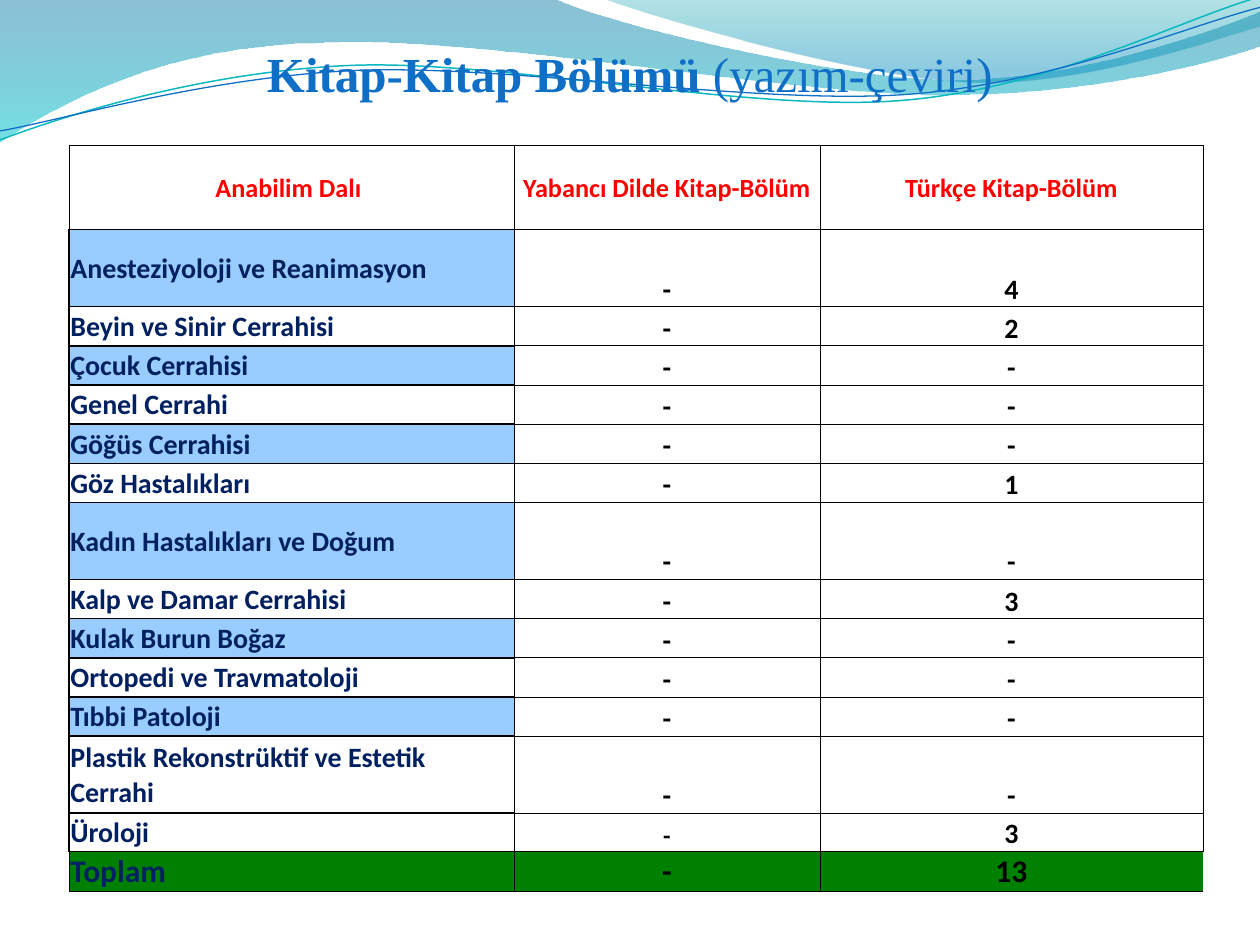
from itertools import chain
from math import cos, radians, sin

from lxml.etree import SubElement
from pptx import Presentation
from pptx.dml.color import RGBColor
from pptx.enum.text import MSO_ANCHOR, MSO_AUTO_SIZE, PP_ALIGN
from pptx.oxml.ns import qn
from pptx.util import Cm, Pt

TITLE_ONLY = 5
LINE_TILT = -2.7
BLACK, RED, NAVY = "000000", "FF0000", "002060"
LIGHT_BLUE, WHITE, GREEN = "99CCFF", "FFFFFF", "008000"

HEADERS = ["Anabilim Dalı ", "Yabancı Dilde Kitap-Bölüm", "Türkçe Kitap-Bölüm"]
DEPARTMENTS = [
    ("Anesteziyoloji ve Reanimasyon", "-", "4"),
    ("Beyin ve Sinir Cerrahisi", "-", "2"),
    ("Çocuk Cerrahisi", "-", "-"),
    ("Genel Cerrahi", "-", "-"),
    ("Göğüs Cerrahisi", "-", "-"),
    ("Göz Hastalıkları", "-", "1"),
    ("Kadın Hastalıkları ve Doğum", "-", "-"),
    ("Kalp ve Damar Cerrahisi", "-", "3"),
    ("Kulak Burun Boğaz", "-", "-"),
    ("Ortopedi ve Travmatoloji", "-", "-"),
    ("Tıbbi Patoloji", "-", "-"),
    ("Plastik Rekonstrüktif ve Estetik Cerrahi", "-", "-"),
    ("Üroloji", "-", "3"),
]
TOTAL = ("Toplam", "-", "13")
COLUMN_WIDTHS = [8.97, 6.17, 7.72]
TALL_ROWS = {0: 1.7, 1: 1.55, 7: 1.55, 12: 1.55, 13: 0.77, 14: 0.77}
ROW_HEIGHT = 0.79

# Outlines in cm: a start point, then segments of one point (line) or three (curve).
LEFT_WAVE = [
    (0, -0.03), [(11.18, -0.03)],
    [(12.09, 0.43), (16.87, 1.6), (19.25, 1.6)],
    [(21.67, 1.6), (24.33, 0.66), (25.4, 0.23)], [(25.43, 0.91)],
    [(24.97, 1.12), (22.1, 1.93), (18.95, 1.91)],
    [(15.8, 1.91), (9.7, 0.71), (6.53, 0.86)],
    [(3.28, 0.89), (1.17, 2.11), (-0.03, 2.87)], [(0, -0.03)],
]
RIGHT_WAVE = [
    (12.17, -0.03),
    [(12.93, 0.28), (17.32, 1.57), (19.53, 1.65)],
    [(21.74, 1.75), (24.41, 0.81), (25.4, 0.53)], [(25.4, 0)], [(12.17, -0.03)],
]
TEAL_LINE = [
    (0, 2.82),
    [(1.22, 2.36), (4.01, 1.45), (7.04, 1.32)],
    [(10.03, 1.19), (15.06, 2.26), (18.11, 2.03)],
    [(21.16, 1.8), (23.83, 0.38), (25.35, -0.05)],
]
BLUE_LINE = [
    (0, 2.64),
    [(1.19, 2.44), (4.17, 1.55), (7.19, 1.42)],
    [(10.24, 1.3), (15.16, 2.11), (18.21, 1.91)],
    [(21.23, 1.7), (23.9, 0.53), (25.4, 0.15)],
]


def rgb(value):
    return RGBColor.from_string(value)


def add_text(paragraph, text, *, size, color, font="Calibri", bold=True, align=PP_ALIGN.LEFT):
    paragraph.alignment = align
    run = paragraph.add_run()
    run.text = text
    run.font.name, run.font.size, run.font.bold = font, Pt(size), bold
    run.font.color.rgb = rgb(color)


def level(points, center):
    """Turn points about the center so that LINE_TILT brings them back."""
    angle = radians(-LINE_TILT)
    cx, cy = center
    return [(cx + (x - cx) * cos(angle) - (y - cy) * sin(angle),
             cy + (x - cx) * sin(angle) + (y - cy) * cos(angle)) for x, y in points]


def bend(shape, segments):
    """Join the straight steps of each three-point segment into one Bézier curve."""
    steps = iter(list(shape.element.iter(qn("a:lnTo"))))
    for segment in segments:
        first, *others = [next(steps) for _ in segment]
        if others:
            first.tag = qn("a:cubicBezTo")
        for step in others:
            first.append(step[0])
            step.getparent().remove(step)


def set_borders(cell, **widths):
    """Draw black borders given as L, R, T, B in points; None hides one."""
    properties = cell._tc.get_or_add_tcPr()
    for side in "LRTB":
        width = widths[side]
        border = SubElement(properties, qn(f"a:ln{side}"), w=str(Pt(width or 0)))
        if width is None:
            SubElement(border, qn("a:noFill"))
        else:
            fill = SubElement(border, qn("a:solidFill"))
            SubElement(fill, qn("a:srgbClr"), val=BLACK)


class SlideBuilder:
    """Holds the current slide and the style of its elements."""

    heading_font = "Times New Roman"
    heading_color = "0F6FC6"

    def __init__(self, slide):
        self.slide = slide

    def outline(self, points, segments, close):
        start, *rest = [(Cm(x), Cm(y)) for x, y in points]
        builder = self.slide.shapes.build_freeform(*start)
        builder.add_line_segments(rest, close=close)
        shape = builder.convert_to_shape()
        bend(shape, segments)
        shape.shadow.inherit = False
        return shape

    def wave(self, outline, stops):
        """Add a filled wave; stops are (position, color, opacity percent)."""
        start, *segments = outline
        shape = self.outline([start, *chain(*segments)], segments, close=True)
        shape.line.fill.background()
        shape.fill.gradient()
        shape.fill.gradient_angle = 270
        for stop, (position, color, _) in zip(shape.fill.gradient_stops, stops):
            stop.position = position
            stop.color.rgb = rgb(color)
        for tint, (_, _, opacity) in zip(shape.element.spPr.iter(qn("a:srgbClr")), stops):
            SubElement(tint, qn("a:alpha"), val=str(opacity * 1000))

    def curve(self, outline, center, color, width):
        start, *segments = outline
        points = level([start, *chain(*segments)], center)
        shape = self.outline(points, segments, close=False)
        shape.rotation = LINE_TILT
        shape.fill.background()
        shape.line.color.rgb = rgb(color)
        shape.line.width = Pt(width)

    def title(self, parts):
        title = self.slide.shapes.title
        title.element.getparent().append(title.element)  # in front of the waves
        title.left, title.top, title.width, title.height = Cm(1.39), Cm(0.71), Cm(22.86), Cm(2.59)
        frame = title.text_frame
        frame.auto_size = MSO_AUTO_SIZE.NONE
        frame.word_wrap = True
        frame.vertical_anchor = MSO_ANCHOR.TOP
        frame.margin_top = Cm(0.16)
        for text, bold in parts:
            add_text(frame.paragraphs[0], text, size=28, color=self.heading_color,
                     font=self.heading_font, bold=bold, align=PP_ALIGN.CENTER)

    def cell(self, cell, text, *, fill, borders, anchor, **text_format):
        cell.margin_left = cell.margin_right = cell.margin_top = Cm(0.03)
        cell.margin_bottom = 0
        cell.vertical_anchor = anchor
        set_borders(cell, **borders)
        cell.fill.solid()
        cell.fill.fore_color.rgb = rgb(fill)
        add_text(cell.text_frame.paragraphs[0], text, **text_format)

    def table(self, rows):
        heights = [TALL_ROWS.get(i, ROW_HEIGHT) for i in range(len(rows))]
        table = self.slide.shapes.add_table(
            len(rows), len(COLUMN_WIDTHS), Cm(1.39), Cm(2.93),
            Cm(sum(COLUMN_WIDTHS)), Cm(sum(heights))).table
        table.first_row = table.horz_banding = False
        for column, width in zip(table.columns, COLUMN_WIDTHS):
            column.width = Cm(width)
        last = len(rows) - 1
        for r, (row, height) in enumerate(zip(rows, heights)):
            table.rows[r].height = Cm(height)
            for c, text in enumerate(row):
                is_name = c == 0
                borders = dict.fromkeys("LRTB", 0.5)
                fill = GREEN if r == last else WHITE
                size = 15 if r == 0 else 18 if r == last else 16
                if is_name and 0 < r < last:
                    borders.update(L=1, T=1 if r > 1 else 0.5, B=1 if r < last - 1 else 0.5)
                    fill = LIGHT_BLUE if r % 2 and r < last - 1 else WHITE
                if (r, c) == (last, 2):
                    borders["R"] = None
                if (r, c) == (last - 1, 1):
                    size = 14
                self.cell(
                    table.cell(r, c), text, fill=fill, borders=borders, size=size,
                    anchor=MSO_ANCHOR.MIDDLE if is_name or r == 0 else MSO_ANCHOR.BOTTOM,
                    color=RED if r == 0 else NAVY if is_name else BLACK,
                    align=PP_ALIGN.LEFT if is_name and r else PP_ALIGN.CENTER)


def main():
    deck = Presentation()
    deck.slide_width, deck.slide_height = Cm(25.4), Cm(19.05)
    builder = SlideBuilder(deck.slides.add_slide(deck.slide_layouts[TITLE_ONLY]))
    builder.wave(LEFT_WAVE, [(0, "0074A1", 45), (1, "00C6CF", 55)])
    builder.wave(RIGHT_WAVE, [(0, "00A1A9", 30), (0.8, "008BBF", 45)])
    builder.curve(TEAL_LINE, (12.67, 1.46), "0AB8BF", 0.85)
    builder.curve(BLUE_LINE, (12.69, 1.5), "0F6FC6", 0.75)
    builder.title([("Kitap-Kitap Bölümü ", True), ("(yazım-çeviri) ", False)])
    builder.table([HEADERS, *DEPARTMENTS, TOTAL])
    deck.save("out.pptx")


if __name__ == "__main__":
    main()
